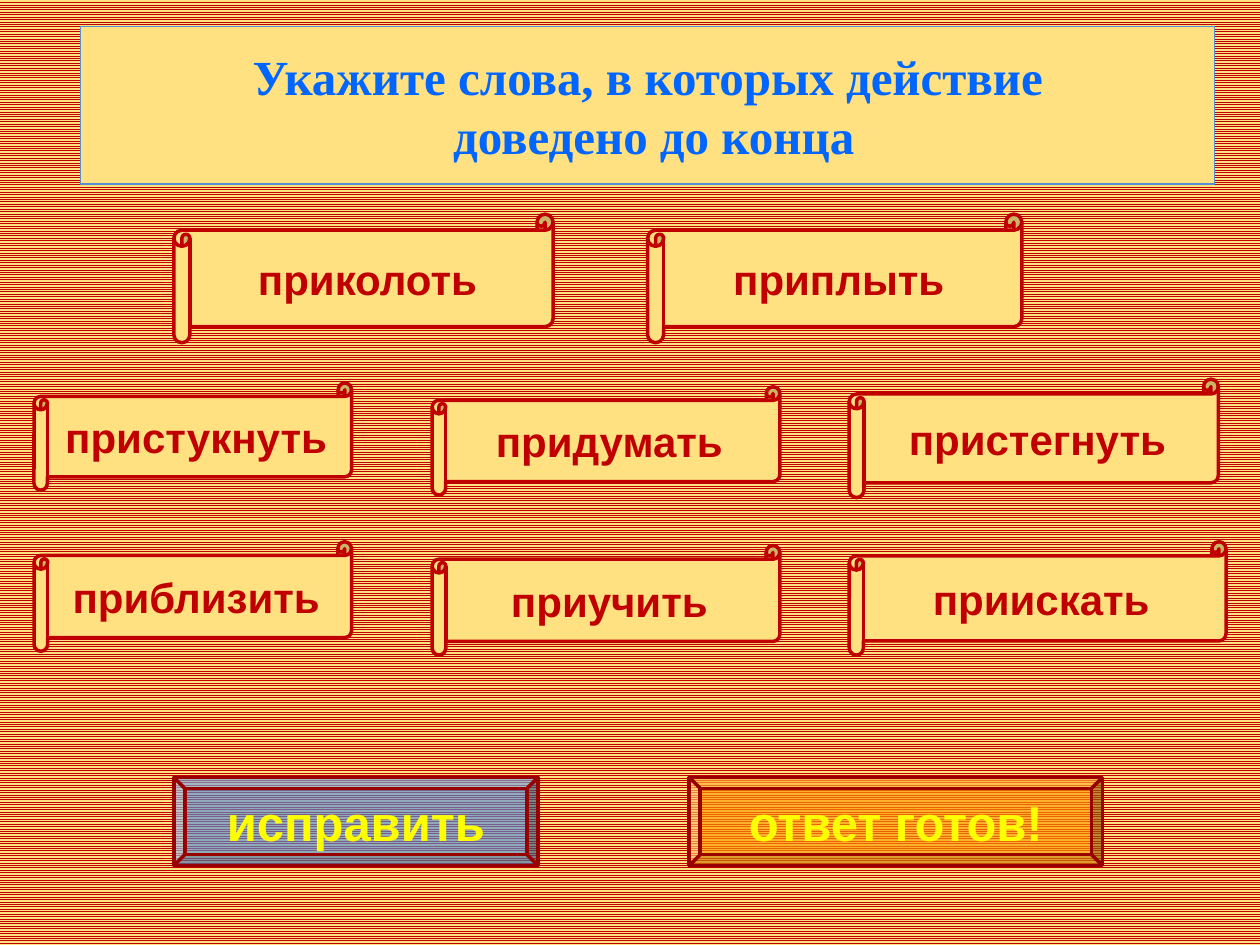
import pptx
import pptx.util
import pptx.dml.color
import pptx.enum.dml
import pptx.enum.shapes
import pptx.enum.text
import pptx.oxml
import pptx.oxml.ns
import lxml.etree

Inches = pptx.util.Inches
Pt = pptx.util.Pt
Kind = pptx.enum.shapes.MSO_SHAPE

CREAM = "FFE181"
RED = "C00000"


def color(code):
    return pptx.dml.color.RGBColor.from_string(code)


class Deck:
    font = "Arial"

    def __init__(self, width, height):
        self.show = pptx.Presentation()
        self.show.slide_width = Inches(width)
        self.show.slide_height = Inches(height)
        self.slide = self.show.slides.add_slide(self.show.slide_layouts[6])

    def stripes(self, front, back):
        fill = self.slide.background.fill
        fill.patterned()
        fill.pattern = pptx.enum.dml.MSO_PATTERN.LIGHT_HORIZONTAL
        fill.fore_color.rgb = color(front)
        fill.back_color.rgb = color(back)

    def box(self, kind, place, fill, line, width):
        shape = self.slide.shapes.add_shape(kind, *map(Inches, place))
        shape.shadow.inherit = False
        shape.fill.solid()
        shape.fill.fore_color.rgb = color(fill)
        shape.line.color.rgb = color(line)
        shape.line.width = Pt(width)
        return shape

    def label(self, shape, lines, size, ink, font=None):
        frame = shape.text_frame
        frame.word_wrap = True
        frame.vertical_anchor = pptx.enum.text.MSO_ANCHOR.MIDDLE
        runs = []
        for index, line in enumerate(lines):
            para = frame.add_paragraph() if index else frame.paragraphs[0]
            para.alignment = pptx.enum.text.PP_ALIGN.CENTER
            run = para.add_run()
            run.text = line
            run.font.name = font or self.font
            run.font.size = Pt(size)
            run.font.bold = True
            run.font.color.rgb = color(ink)
            runs.append(run)
        return runs

    def title(self, place, lines):
        shape = self.box(Kind.RECTANGLE, place, CREAM, "558ED5", 0.75)
        self.label(shape, lines, 28, "0066FF", "Times New Roman")

    def scroll(self, place, word):
        shape = self.box(Kind.HORIZONTAL_SCROLL, place, CREAM, RED, 2)
        self.label(shape, [word], 24, RED)

    def button(self, place, text, fill):
        shape = self.box(Kind.BEVEL, place, fill, "990000", 2)
        qn = pptx.oxml.ns.qn
        tint = shape._element.spPr.find(qn("a:solidFill"))[0]
        lxml.etree.SubElement(tint, qn("a:alpha"), val="66000")
        for run in self.label(shape, [text], 28, "FFFF00"):
            edge = pptx.oxml.parse_xml(
                f'<a:ln {pptx.oxml.ns.nsdecls("a")} w="{Pt(1.42)}">'
                f'<a:solidFill><a:srgbClr val="{RED}"/></a:solidFill></a:ln>'
            )
            run._r.get_or_add_rPr().insert(0, edge)

    def save(self):
        self.show.save("out.pptx")


def main():
    deck = Deck(10, 7.5)
    deck.stripes(RED, CREAM)
    deck.button((1.38, 6.17, 2.89, 0.7), "исправить", "558ED5")
    deck.button((5.47, 6.17, 3.28, 0.7), "ответ готов!", "FF9900")
    deck.title(
        (0.64, 0.21, 9, 1.25),
        ["Укажите слова, в которых действие", " доведено до конца"],
    )
    words = [
        ("пристукнуть", 0.27, 3.04, 2.52, 0.85),
        ("приблизить", 0.27, 4.3, 2.52, 0.87),
        ("придумать", 3.43, 3.07, 2.76, 0.86),
        ("приучить", 3.43, 4.33, 2.76, 0.87),
        ("пристегнуть", 6.74, 3.01, 2.93, 0.94),
        ("приискать", 6.74, 4.3, 2.99, 0.9),
        ("приколоть", 1.38, 1.7, 3.01, 1.02),
        ("приплыть", 5.14, 1.7, 2.97, 1.02),
    ]
    for word, *place in words:
        deck.scroll(place, word)
    deck.save()


if __name__ == "__main__":
    main()
